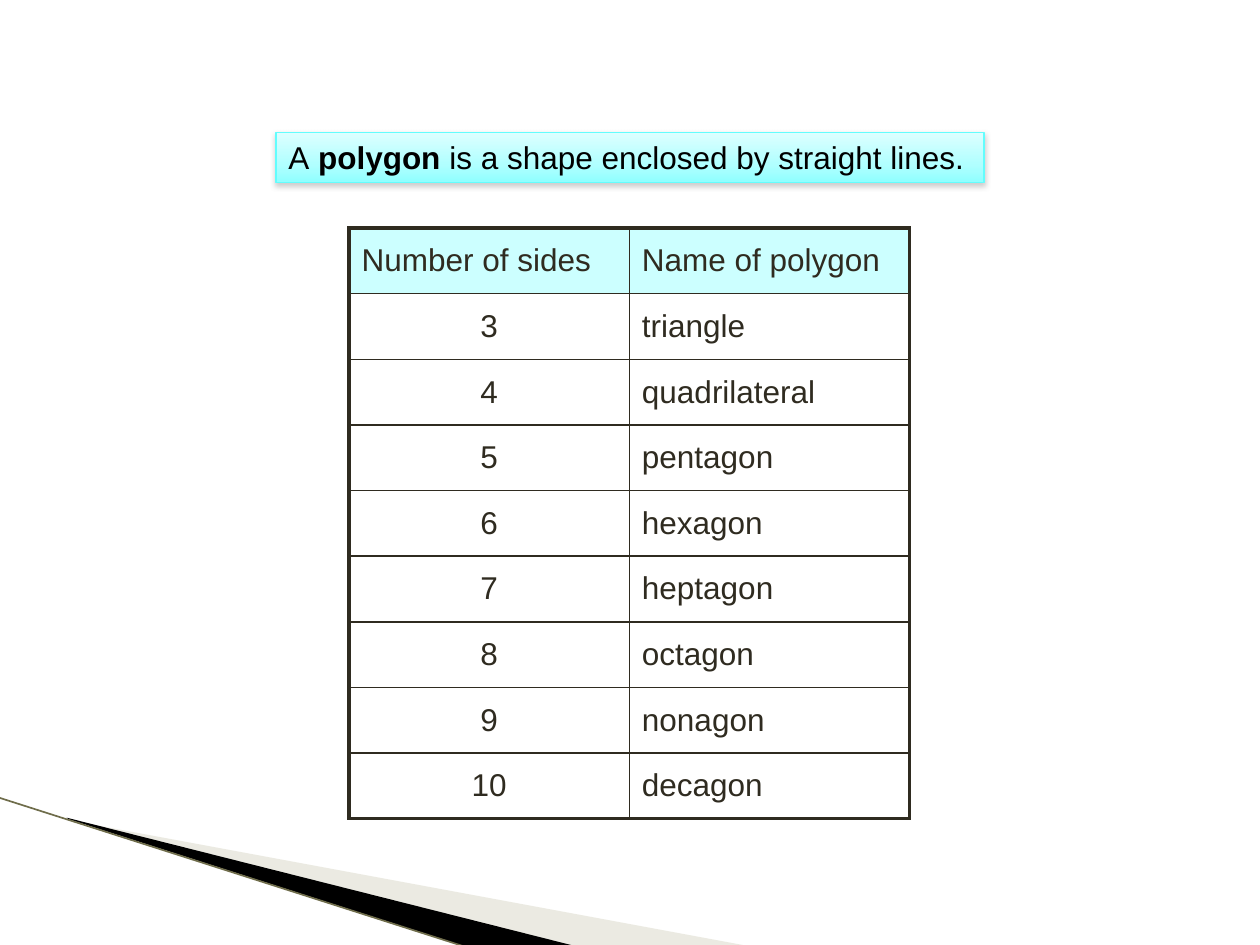
from dataclasses import dataclass

import pptx
import pptx.dml.color
import pptx.enum.shapes
import pptx.enum.text
import pptx.oxml
import pptx.oxml.ns
import pptx.util
from lxml import etree

# The slide is a grid of 100 columns by 75 rows of square cells
COLUMNS, ROWS = 100, 75
CELL = pptx.util.Inches(0.1)


@dataclass(frozen=True)
class Theme:
    font: str = "Arial"
    text_size: float = 18
    ink: str = "2F2B20"
    black: str = "000000"
    header: str = "CCFFFF"
    banner_edge: str = "63FDFD"
    banner_stops: tuple = ((0, "DDFFFF"), (65, "B0FFFF"), (100, "8FFFFF"))
    shadow: str = "808080"
    pale_wedge: str = "CECCB7"
    wedge_line: str = "6F6D4B"
    outer_border: float = 2.25
    inner_border: float = 1


@dataclass(frozen=True)
class Area:
    column: float
    row: float
    width: float
    height: float

    def lengths(self) -> tuple:
        return tuple(grid(n) for n in (self.column, self.row, self.width, self.height))


@dataclass(frozen=True)
class Wedge:
    corners: tuple
    color: str
    opacity: int = 100


THEME = Theme()
WEDGES = (
    Wedge(((5.5, 65.1), (59.5, 75.1), (45.6, 75.1), (5.5, 65)), THEME.pale_wedge, 40),
    Wedge(((5.3, 64.9), (45.7, 75.1), (37.2, 75.2), (5.4, 65)), THEME.black),
)
EDGE = (-0.1, 63.3, 37.1, 75.2)
BANNER = Area(21.9, 10.5, 56.2, 4)
POLYGON_TABLE = Area(27.7, 18.1, 44.5, 46.9)
DEFINITION = (("A", False), (" polygon ", True),
              ("is a shape enclosed by straight lines.", False))
HEADINGS = ("Number of sides", "Name of polygon")
POLYGONS = ("triangle", "quadrilateral", "pentagon", "hexagon",
            "heptagon", "octagon", "nonagon", "decagon")


def grid(cells: float) -> int:
    return round(cells * CELL)


def rgb(color: str) -> pptx.dml.color.RGBColor:
    return pptx.dml.color.RGBColor.from_string(color)


def xml(text: str):
    return pptx.oxml.parse_xml(text.replace(">", f" {pptx.oxml.ns.nsdecls('a')}>", 1))


def format_run(run, color: str, bold: bool = False) -> None:
    values = {"name": THEME.font, "size": pptx.util.Pt(THEME.text_size), "bold": bold}
    for attribute, value in values.items():
        setattr(run.font, attribute, value)
    run.font.color.rgb = rgb(color)


def draw_wedge(slide, wedge: Wedge) -> None:
    points = [(grid(x), grid(y)) for x, y in wedge.corners]
    builder = slide.shapes.build_freeform(*points[0])
    builder.add_line_segments(points[1:], close=True)
    shape = builder.convert_to_shape()
    shape.shadow.inherit = False
    shape.line.fill.background()
    shape.fill.solid()
    shape.fill.fore_color.rgb = rgb(wedge.color)
    if wedge.opacity < 100:
        color = shape._element.spPr.find(".//" + pptx.oxml.ns.qn("a:srgbClr"))
        etree.SubElement(color, pptx.oxml.ns.qn("a:alpha"), val=str(wedge.opacity * 1000))


def draw_edge(slide) -> None:
    edge = slide.shapes.add_connector(
        pptx.enum.shapes.MSO_CONNECTOR.STRAIGHT, *map(grid, EDGE))
    edge.line.color.rgb = rgb(THEME.wedge_line)
    edge.line.width = pptx.util.Pt(0.95)
    etree.SubElement(edge._element.spPr, pptx.oxml.ns.qn("a:effectLst"))


def draw_banner(slide) -> None:
    banner = slide.shapes.add_shape(
        pptx.enum.shapes.MSO_SHAPE.RECTANGLE, *BANNER.lengths())
    banner.line.color.rgb = rgb(THEME.banner_edge)
    banner.line.width = pptx.util.Pt(0.75)

    # Three-stop gradient, running downwards
    banner.fill.gradient()
    banner.fill.gradient_angle = 270
    stops = banner._element.spPr.find(".//" + pptx.oxml.ns.qn("a:gsLst"))
    stops[:] = [xml(f'<a:gs pos="{share * 1000}"><a:srgbClr val="{color}"/></a:gs>')
                for share, color in THEME.banner_stops]

    # Soft shadow below
    banner.shadow.inherit = False
    effects = banner._element.spPr.find(pptx.oxml.ns.qn("a:effectLst"))
    effects.append(xml(
        f'<a:outerShdw blurRad="{pptx.util.Pt(3.1)}" dist="{pptx.util.Pt(1.6)}" '
        f'dir="5400000" rotWithShape="0"><a:srgbClr val="{THEME.shadow}">'
        '<a:alpha val="38000"/></a:srgbClr></a:outerShdw>'))

    frame = banner.text_frame
    values = {"word_wrap": True, "vertical_anchor": pptx.enum.text.MSO_ANCHOR.TOP,
              "auto_size": pptx.enum.text.MSO_AUTO_SIZE.SHAPE_TO_FIT_TEXT}
    for attribute, value in values.items():
        setattr(frame, attribute, value)
    sentence = frame.paragraphs[0]
    sentence.alignment = pptx.enum.text.PP_ALIGN.LEFT
    for words, bold in DEFINITION:
        run = sentence.add_run()
        run.text = words
        format_run(run, THEME.black, bold)


def draw_borders(cell, outer: dict) -> None:
    properties = cell._tc.get_or_add_tcPr()
    for side, is_outer in outer.items():
        width = pptx.util.Pt(THEME.outer_border if is_outer else THEME.inner_border)
        properties.append(xml(
            f'<a:ln{side} w="{width}"><a:solidFill><a:srgbClr val="{THEME.ink}"/>'
            f'</a:solidFill></a:ln{side}>'))


def draw_table(slide) -> None:
    entries = [HEADINGS] + [(str(sides), name) for sides, name in enumerate(POLYGONS, 3)]
    last_row, last_column = len(entries) - 1, len(HEADINGS) - 1
    table = slide.shapes.add_table(
        len(entries), len(HEADINGS), *POLYGON_TABLE.lengths()).table
    for attribute, value in {"first_row": False, "horz_banding": False}.items():
        setattr(table, attribute, value)
    for column in table.columns:
        column.width = grid(POLYGON_TABLE.width / len(HEADINGS))
    for row in table.rows:
        row.height = grid(POLYGON_TABLE.height / len(entries))

    for r, entry in enumerate(entries):
        for c, words in enumerate(entry):
            cell = table.cell(r, c)
            draw_borders(cell, {"L": c == 0, "R": c == last_column,
                                "T": r == 0, "B": r == last_row})
            if r == 0:
                cell.fill.solid()
                cell.fill.fore_color.rgb = rgb(THEME.header)
            else:
                cell.fill.background()
            cell.vertical_anchor = pptx.enum.text.MSO_ANCHOR.MIDDLE
            paragraph = cell.text_frame.paragraphs[0]
            centred = r > 0 and c == 0
            paragraph.alignment = (pptx.enum.text.PP_ALIGN.CENTER if centred
                                   else pptx.enum.text.PP_ALIGN.LEFT)
            run = paragraph.add_run()
            run.text = words
            format_run(run, THEME.ink)


def main() -> None:
    deck = pptx.Presentation()
    deck.slide_width, deck.slide_height = grid(COLUMNS), grid(ROWS)
    slide = deck.slides.add_slide(deck.slide_layouts.get_by_name("Blank"))

    # Corner decoration
    for wedge in WEDGES:
        draw_wedge(slide, wedge)
    draw_edge(slide)

    # Polygon names and definition
    draw_table(slide)
    draw_banner(slide)
    deck.save("out.pptx")


if __name__ == "__main__":
    main()
